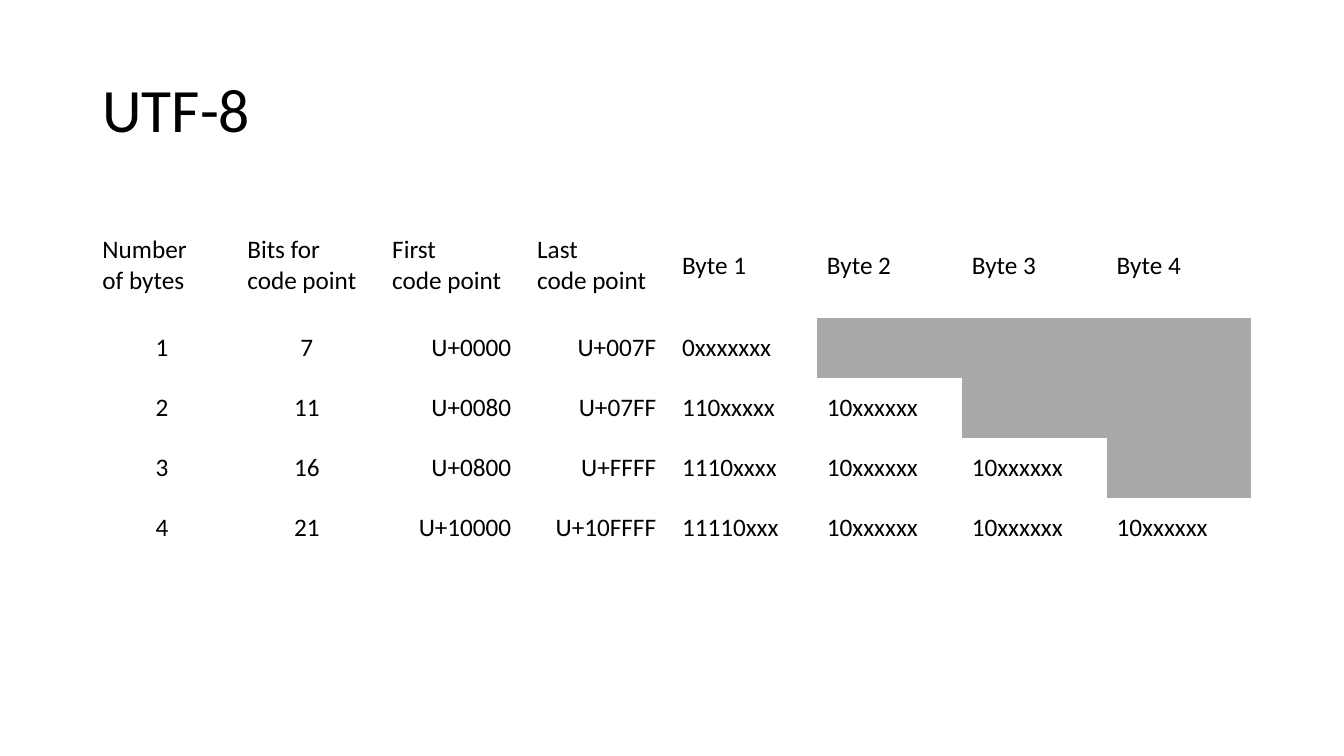
from pptx import Presentation
from pptx.dml.color import RGBColor
from pptx.enum.text import MSO_ANCHOR, PP_ALIGN
from pptx.oxml.ns import qn
from pptx.util import Emu, Pt

EMU_PER_PX = 9525
FONT = "Calibri"
BLACK = "000000"
UNUSED_GREY = "A9A9A9"
NO_GRID_STYLE = "{2D5ABB26-0587-4C30-8999-92F81FD0307C}"
HEADER_HEIGHT = 100

HEADERS = [
    "Number\nof bytes", "Bits for\ncode point", "First\ncode point", "Last\ncode point",
    "Byte 1", "Byte 2", "Byte 3", "Byte 4",
]
ENCODINGS = [
    ["1 ", "7 ", "U+0000 ", "U+007F ", "0xxxxxxx"],
    ["2 ", "11 ", "U+0080 ", "U+07FF ", "110xxxxx"],
    ["3 ", "16 ", "U+0800 ", "U+FFFF ", "1110xxxx"],
    ["4 ", "21 ", "U+10000 ", "U+10FFFF ", "11110xxx"],
]
CONTINUATION_BYTE = "10xxxxxx"
COLUMN_ALIGNMENTS = [PP_ALIGN.CENTER] * 2 + [PP_ALIGN.RIGHT] * 2 + [PP_ALIGN.LEFT] * 4


def px(length):
    return Emu(length * EMU_PER_PX)


def color(hex_string):
    return RGBColor.from_string(hex_string)


def write_text(paragraph, text, size, alignment):
    paragraph.alignment = alignment
    for index, line in enumerate(text.split("\n")):
        if index:
            paragraph.add_line_break()
        run = paragraph.add_run()
        run.text = line
        run.font.name = FONT
        run.font.size = Pt(size)
        run.font.color.rgb = color(BLACK)


def add_title(slide, left, top, width, height):
    shape = slide.shapes.add_textbox(px(left), px(top), px(width), px(height))
    frame = shape.text_frame
    frame.word_wrap = True
    frame.vertical_anchor = MSO_ANCHOR.MIDDLE
    paragraph = frame.paragraphs[0]
    paragraph.line_spacing = 0.9
    write_text(paragraph, "UTF-8", 44, PP_ALIGN.LEFT)


def fill_cell(cell, text, alignment):
    cell.vertical_anchor = MSO_ANCHOR.MIDDLE
    if text:
        cell.fill.background()
        write_text(cell.text_frame.paragraphs[0], text, 18, alignment)
    else:
        cell.fill.solid()
        cell.fill.fore_color.rgb = color(UNUSED_GREY)


def add_encoding_table(slide, left, top, width, height):
    row_count, column_count = len(ENCODINGS) + 1, len(HEADERS)
    shape = slide.shapes.add_table(
        row_count, column_count, px(left), px(top), px(width), px(height)
    )
    table = shape.table
    table.first_row = False
    table.horz_banding = False
    for style in shape._element.iter(qn("a:tableStyleId")):
        style.text = NO_GRID_STYLE
    for column in table.columns:
        column.width = px(width // column_count)
    for row in table.rows:
        row.height = px((height - HEADER_HEIGHT) // len(ENCODINGS))
    table.rows[0].height = px(HEADER_HEIGHT)

    for column_index, header in enumerate(HEADERS):
        fill_cell(table.cell(0, column_index), header, PP_ALIGN.LEFT)
    for byte_count, encoding in enumerate(ENCODINGS, start=1):
        texts = encoding + [CONTINUATION_BYTE] * (byte_count - 1)
        texts += [""] * (column_count - len(texts))
        for column_index, text in enumerate(texts):
            cell = table.cell(byte_count, column_index)
            fill_cell(cell, text, COLUMN_ALIGNMENTS[column_index])


def main():
    presentation = Presentation()
    presentation.slide_width = px(1280)
    presentation.slide_height = px(720)
    slide = presentation.slides.add_slide(presentation.slide_layouts[6])
    add_title(slide, 88, 38, 1104, 139)
    add_encoding_table(slide, 88, 203, 1104, 328)
    presentation.save("out.pptx")


if __name__ == "__main__":
    main()
